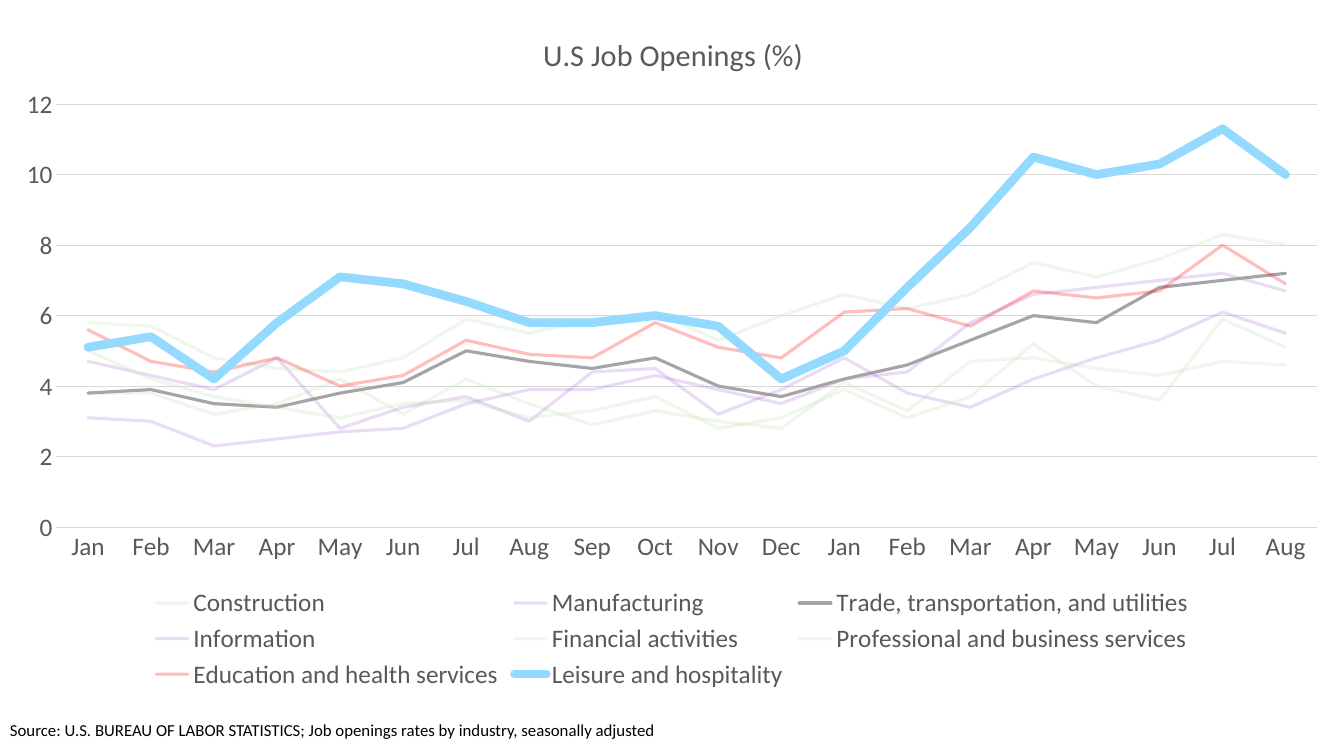
from dataclasses import dataclass

from lxml.etree import SubElement
from pptx import Presentation
from pptx.chart.chart import Chart
from pptx.chart.data import CategoryChartData
from pptx.chart.series import LineSeries
from pptx.dml.color import RGBColor
from pptx.enum.chart import XL_CHART_TYPE as ChartType
from pptx.enum.chart import XL_LEGEND_POSITION as LegendPosition
from pptx.enum.chart import XL_TICK_MARK as TickMark
from pptx.enum.text import MSO_ANCHOR as Anchor
from pptx.oxml import parse_xml
from pptx.oxml.ns import nsdecls, qn
from pptx.slide import Slide
from pptx.text.text import Font
from pptx.util import Inches, Pt

FONT = "Calibri"
BLACK = RGBColor(0x00, 0x00, 0x00)
WHITE = RGBColor(0xFF, 0xFF, 0xFF)
TEXT_GREY = RGBColor(0x59, 0x59, 0x59)
GRID_GREY = RGBColor(0xD9, 0xD9, 0xD9)
GREY = RGBColor(0xA5, 0xA5, 0xA5)
GREEN = RGBColor(0xC5, 0xE0, 0xB4)
PURPLE = RGBColor(0xAE, 0x78, 0xD6)
RED = RGBColor(0xFF, 0x00, 0x00)
SKY = RGBColor(0x94, 0xDA, 0xFE)

YEAR = ["Jan", "Feb", "Mar", "Apr", "May", "Jun",
        "Jul", "Aug", "Sep", "Oct", "Nov", "Dec"]
MONTHS = YEAR + YEAR[:8]


@dataclass
class Industry:
    name: str
    rates: list[float]
    color: RGBColor
    opacity: int = 25
    width: float = 2.25


INDUSTRIES = [
    Industry("Construction",
             [3.8, 3.8, 3.2, 3.5, 4.2, 3.2, 4.2, 3.5, 2.9, 3.3,
              3, 2.8, 4.1, 3.3, 4.7, 4.8, 4.5, 4.3, 4.7, 4.6], GREEN),
    Industry("Manufacturing",
             [3.1, 3, 2.3, 2.5, 2.7, 2.8, 3.5, 3.9, 3.9, 4.3,
              3.9, 3.5, 4.2, 4.4, 5.8, 6.6, 6.8, 7, 7.2, 6.7], PURPLE),
    Industry("Trade, transportation, and utilities",
             [3.8, 3.9, 3.5, 3.4, 3.8, 4.1, 5, 4.7, 4.5, 4.8,
              4, 3.7, 4.2, 4.6, 5.3, 6, 5.8, 6.8, 7, 7.2], GREY, 100),
    Industry("Information",
             [4.7, 4.3, 3.9, 4.8, 2.8, 3.4, 3.7, 3, 4.4, 4.5,
              3.2, 3.9, 4.8, 3.8, 3.4, 4.2, 4.8, 5.3, 6.1, 5.5], PURPLE),
    Industry("Financial activities",
             [5, 4.2, 3.7, 3.4, 3.1, 3.5, 3.6, 3.1, 3.3, 3.7,
              2.8, 3.1, 3.9, 3.1, 3.7, 5.2, 4, 3.6, 5.9, 5.1], GREEN),
    Industry("Professional and business services",
             [5.8, 5.7, 4.8, 4.5, 4.4, 4.8, 5.9, 5.5, 5.9, 6.1,
              5.3, 6, 6.6, 6.2, 6.6, 7.5, 7.1, 7.6, 8.3, 8], GREEN),
    Industry("Education and health services",
             [5.6, 4.7, 4.4, 4.8, 4, 4.3, 5.3, 4.9, 4.8, 5.8,
              5.1, 4.8, 6.1, 6.2, 5.7, 6.7, 6.5, 6.7, 8, 6.9], RED),
    Industry("Leisure and hospitality",
             [5.1, 5.4, 4.2, 5.8, 7.1, 6.9, 6.4, 5.8, 5.8, 6,
              5.7, 4.2, 5, 6.8, 8.5, 10.5, 10, 10.3, 11.3, 10], SKY, 100, 6.25),
]


def style_font(font: Font, size: float, color: RGBColor) -> None:
    font.name = FONT
    font.size = Pt(size)
    font.bold = False
    font.color.rgb = color


def place(parent, index: int, **fractions: float) -> None:
    for layout in parent.findall(qn("c:layout")):
        parent.remove(layout)
    layout = parse_xml(f"<c:layout {nsdecls('c')}><c:manualLayout/></c:layout>")
    manual = layout[0]
    if "w" in fractions:
        SubElement(manual, qn("c:layoutTarget"), val="inner")
    for mode in ("xMode", "yMode"):
        SubElement(manual, qn(f"c:{mode}"), val="edge")
    for key, fraction in fractions.items():
        SubElement(manual, qn(f"c:{key}"), val=str(fraction))
    parent.insert(index, layout)


def style_series(series: LineSeries, industry: Industry) -> None:
    series.smooth = False
    line = series.format.line
    line.width = Pt(industry.width)
    line.color.rgb = industry.color
    outline = series._element.find(f"{qn('c:spPr')}/{qn('a:ln')}")
    outline.set("cap", "rnd")
    SubElement(outline, qn("a:round"))
    if industry.opacity < 100:
        color = outline.find(f".//{qn('a:srgbClr')}")
        SubElement(color, qn("a:alpha"), val=str(industry.opacity * 1000))


def style_axes(chart: Chart) -> None:
    months, rates = chart.category_axis, chart.value_axis
    for axis in (months, rates):
        axis.major_tick_mark = axis.minor_tick_mark = TickMark.NONE
        style_font(axis.tick_labels.font, 18, TEXT_GREY)
    rates.minimum_scale, rates.maximum_scale, rates.major_unit = 0, 12, 2
    rates.format.line.fill.background()
    for line in (months.format.line, rates.major_gridlines.format.line):
        line.color.rgb = GRID_GREY
        line.width = Pt(0.75)


def add_openings_chart(slide: Slide) -> None:
    openings = CategoryChartData()
    openings.categories = MONTHS
    for industry in INDUSTRIES:
        openings.add_series(industry.name, industry.rates)
    chart = slide.shapes.add_chart(ChartType.LINE, Inches(0), Inches(0),
                                   Inches(13.33), Inches(6.89), openings).chart
    style_font(chart.font, 18, BLACK)
    chart.plots[0].vary_by_categories = False
    for series, industry in zip(chart.plots[0].series, INDUSTRIES):
        style_series(series, industry)
    style_axes(chart)

    heading = chart.chart_title.text_frame
    heading.text = "U.S Job Openings (%)"
    style_font(heading.paragraphs[0].font, 21.6, TEXT_GREY)
    place(chart.chart_title._element, 1, x=0.4, y=0.04)
    plot_area = chart._chartSpace.find(f".//{qn('c:plotArea')}")
    place(plot_area, 0, x=0.042, y=0.15, w=0.938, h=0.609)

    chart.has_legend = True
    chart.legend.position = LegendPosition.BOTTOM
    chart.legend.include_in_layout = False
    style_font(chart.legend.font, 18, TEXT_GREY)


def add_source_note(slide: Slide) -> None:
    note = slide.shapes.add_textbox(Inches(0), Inches(6.89), Inches(11.62), Inches(0.5))
    note.fill.solid()
    note.fill.fore_color.rgb = WHITE
    frame = note.text_frame
    frame.word_wrap = True
    frame.vertical_anchor = Anchor.BOTTOM
    frame.text = ("Source: U.S. BUREAU OF LABOR STATISTICS; "
                  "Job openings rates by industry, seasonally adjusted")
    style_font(frame.paragraphs[0].font, 12, BLACK)


def main() -> None:
    deck = Presentation()
    deck.slide_width, deck.slide_height = Inches(13.33), Inches(7.5)
    slide = deck.slides.add_slide(deck.slide_layouts[6])
    add_source_note(slide)
    add_openings_chart(slide)
    deck.save("out.pptx")


if __name__ == "__main__":
    main()
